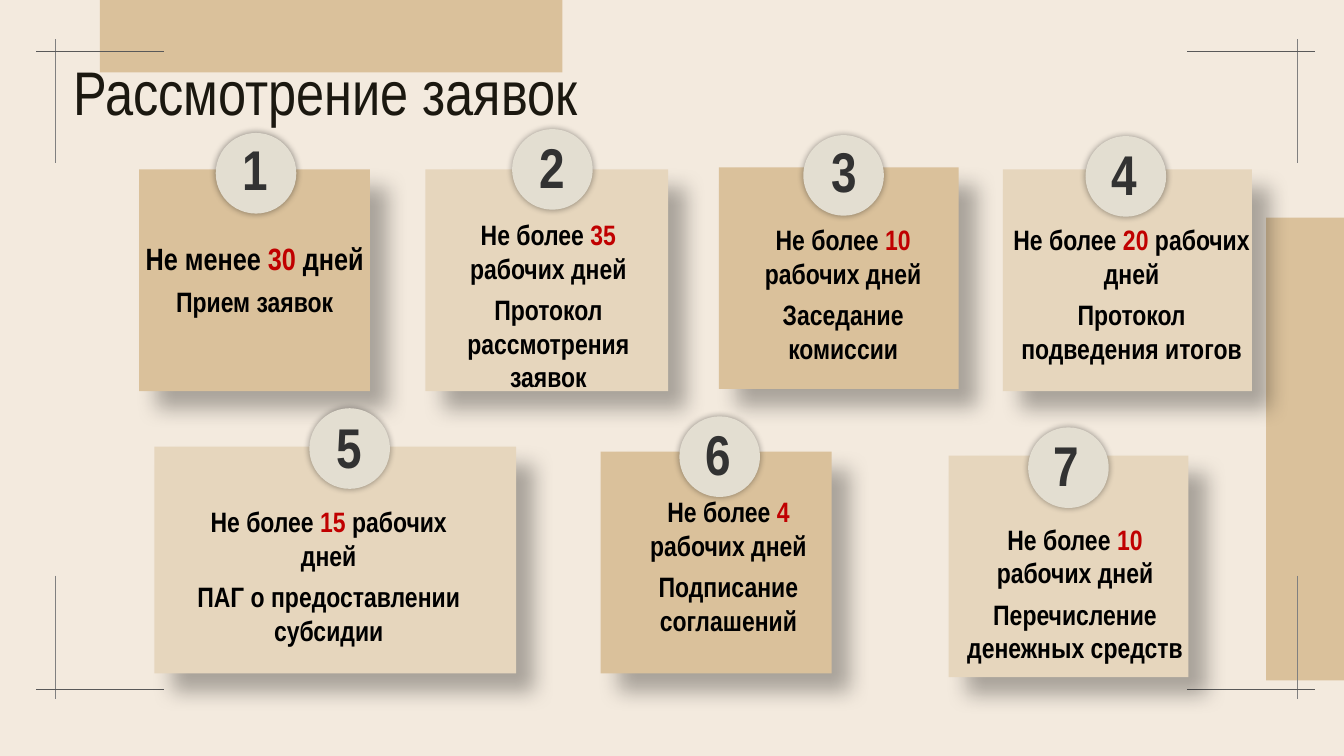
from dataclasses import dataclass
from itertools import product

from lxml import etree
from pptx import Presentation
from pptx.dml.color import RGBColor
from pptx.enum.shapes import MSO_CONNECTOR, MSO_SHAPE as Shape
from pptx.enum.text import MSO_ANCHOR as Anchor, PP_ALIGN as Align
from pptx.oxml import parse_xml
from pptx.oxml.ns import nsdecls, qn
from pptx.util import Pt


@dataclass(frozen=True)
class Theme:
    font: str = "Arial Narrow"
    background: str = "F3EADE"
    tan: str = "DAC19B"
    sand: str = "E6D6BD"
    badge: str = "E3DED1"
    title: str = "1B1810"
    digit: str = "323232"
    text: str = "000000"
    accent: str = "C00000"
    upright: str = "808080"
    level: str = "595959"
    title_size: int = 44
    digit_size: int = 40
    lead_size: int = 22
    text_size: int = 20


theme = Theme()
deck = Presentation()
deck.slide_width, deck.slide_height = Pt(960), Pt(540)
page = deck.slides.add_slide(deck.slide_layouts[6])
page.background.fill.solid()
page.background.fill.fore_color.rgb = RGBColor.from_string(theme.background)


def add_block(kind, bounds, color, shadow=None):
    """Add a plain filled shape; shadow is (blur, distance, opacity %)."""
    block = page.shapes.add_shape(kind, *map(Pt, bounds))
    block.shadow.inherit = False
    block.fill.solid()
    block.fill.fore_color.rgb = RGBColor.from_string(color)
    block.line.fill.background()
    if shadow:
        blur, distance, opacity = shadow
        effects = block._element.spPr.find(qn("a:effectLst"))
        effects.append(parse_xml(
            f'<a:outerShdw {nsdecls("a")} blurRad="{Pt(blur)}" dist="{Pt(distance)}" '
            f'dir="{45 * 60000}" algn="tl" rotWithShape="0"><a:srgbClr val="000000">'
            f'<a:alpha val="{opacity * 1000}"/></a:srgbClr></a:outerShdw>'))


def add_text(bounds, lines, align=Align.CENTER, bold=True, inset=7.2):
    """Add a text box; each line is (size, [(text, color), ...])."""
    box = page.shapes.add_textbox(*map(Pt, bounds))
    frame = box.text_frame
    frame.word_wrap = True
    frame.margin_left = Pt(inset)
    for index, (size, spans) in enumerate(lines):
        para = frame.add_paragraph() if index else frame.paragraphs[0]
        para.alignment = align
        for text, color in spans:
            span = para.add_run()
            span.text = text
            span.font.name = theme.font
            span.font.size = Pt(size)
            span.font.bold = bold
            span.font.color.rgb = RGBColor.from_string(color)
    return frame


# Background bands
add_block(Shape.RECTANGLE, (71.3, 0, 330.5, 51.8), theme.tan)
add_block(Shape.RECTANGLE, (904.3, 155.5, 55.7, 330.5), theme.tan)

# Crop marks in the four corners
uprights = [(x, y, x, y + 88.5, theme.upright)
            for x, y in product((39.6, 926.6), (28.2, 411.1))]
levels = [(x, y, x + 91.4, y, theme.level)
          for x, y in product((25.9, 848.2), (36.7, 492.5))]
for *ends, color in uprights + levels:
    mark = page.shapes.add_connector(MSO_CONNECTOR.STRAIGHT, *map(Pt, ends))
    mark.line.width = Pt(1)
    mark.line.color.rgb = RGBColor.from_string(color)
    etree.SubElement(mark._element.spPr, qn("a:effectLst"))

# Title
title = add_text((45.4, 36.7, 828, 63.4),
                 [(theme.title_size, [("Рассмотрение заявок", theme.title)])],
                 Align.LEFT, bold=False)
title.vertical_anchor = Anchor.MIDDLE
title.paragraphs[0].line_spacing = 0.9

# Steps: card, fill, badge corner, digit corner, text bounds, limit, days, unit, action
steps = [
    ((99.4, 121, 164.9, 158.4), theme.tan, (154.1, 95), (153.4, 92.2),
     (103, 167.8, 164.9, 64.1), "Не менее ", "30", " дней", "Прием заявок"),
    ((303.8, 121, 173.5, 158.4), theme.sand, (365.8, 92.2), (365.8, 91.4),
     (314.6, 151.9, 161.3, 110.2), "Не более ", "35", " рабочих дней",
     "Протокол рассмотрения заявок"),
    ((513.4, 119.5, 171.4, 158.4), theme.tan, (573.8, 96.5), (574.6, 94.3),
     (523.4, 155.5, 164.9, 85.7), "Не более ", "10", " рабочих дней",
     "Заседание комиссии"),
    ((716.4, 121, 177.8, 158.4), theme.sand, (775.4, 97.2), (774, 95.8),
     (720.7, 155.5, 182.2, 110.2), "Не более ", "20", " рабочих дней",
     "Протокол подведения итогов"),
    ((110.2, 319, 258.5, 162), theme.sand, (221, 291.6), (221, 290.9),
     (139.7, 357.1, 197.3, 85.7), "Не более ", "15", " рабочих дней",
     "ПАГ о предоставлении субсидии"),
    ((429.1, 322.6, 164.9, 158.4), theme.tan, (485.3, 297.4), (484.6, 295.9),
     (441.4, 349.9, 164.9, 110.2), "Не более ", "4", " рабочих дней",
     "Подписание соглашений"),
    ((677.5, 325.4, 171.4, 158.4), theme.sand, (734.4, 305.3), (733, 303.8),
     (689, 369.4, 164.9, 110.2), "Не более ", "10", " рабочих дней",
     "Перечисление денежных средств"),
]
for number, step in enumerate(steps, 1):
    card, fill, badge, digit, bounds, limit, days, unit, action = step
    add_block(Shape.RECTANGLE, card, fill, shadow=(15, 18, 30))
    add_block(Shape.OVAL, (*badge, 57.6, 57.6), theme.badge, shadow=(5, 0, 40))
    add_text((*digit, 57.6, 55.4), [(theme.digit_size, [(str(number), theme.digit)])])
    limit_size = theme.lead_size if number == 1 else theme.text_size
    caption = add_text(bounds, [
        (limit_size, [(limit, theme.text), (days, theme.accent), (unit, theme.text)]),
        (theme.text_size, [(action, theme.text)]),
    ], inset=0)
    for para in caption.paragraphs:
        para.space_after = Pt(5.5)

deck.save("out.pptx")
